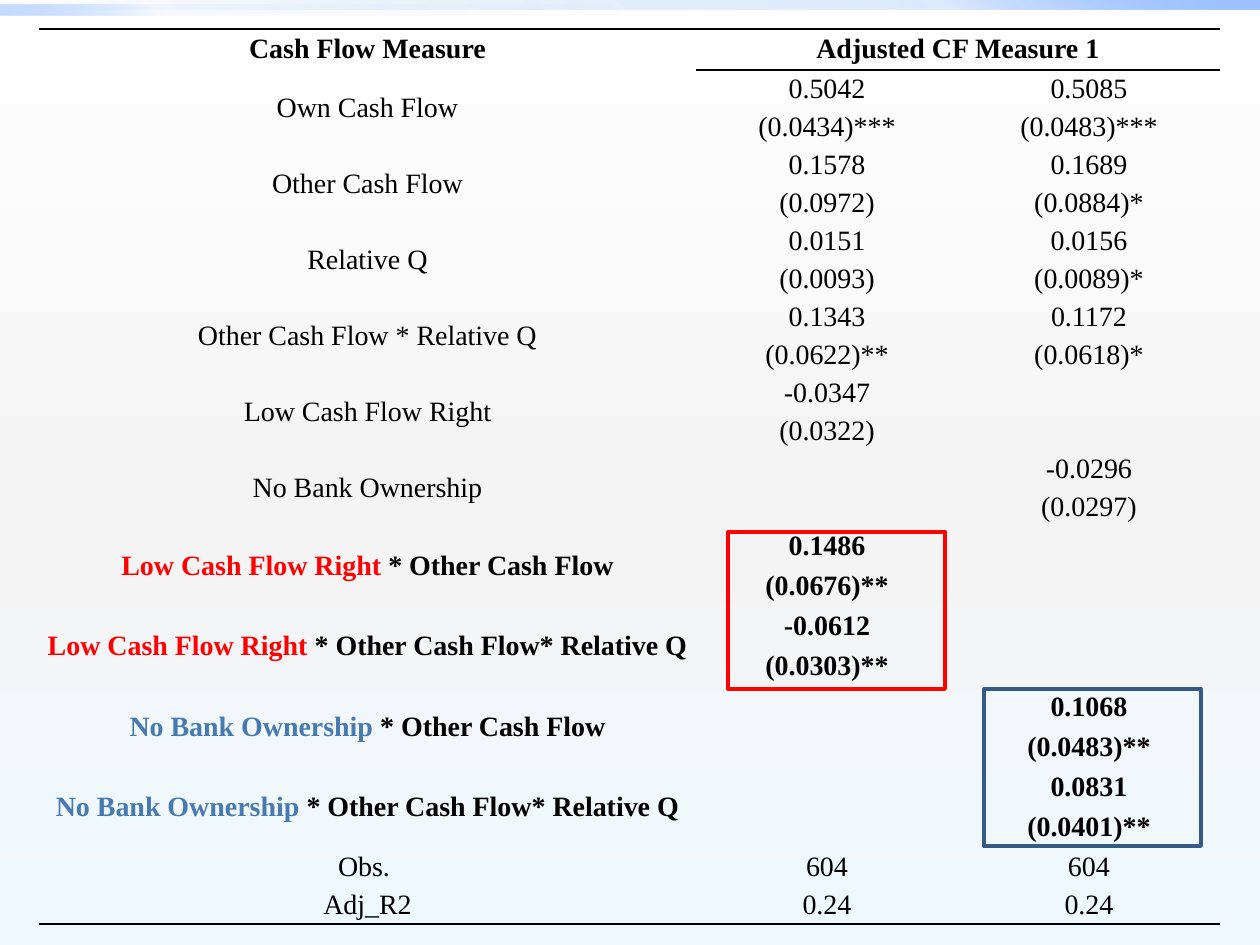
from dataclasses import dataclass

from lxml import etree
from pptx import Presentation
from pptx.dml.color import RGBColor
from pptx.enum.shapes import MSO_SHAPE
from pptx.enum.text import MSO_ANCHOR, PP_ALIGN
from pptx.oxml.ns import qn
from pptx.util import Emu, Pt

RECT = MSO_SHAPE.RECTANGLE
CENTER = PP_ALIGN.CENTER
MIDDLE = MSO_ANCHOR.MIDDLE
PLAIN_TABLE = "{2D5ABB26-0587-4C30-8999-92F81FD0307C}"


@dataclass(frozen=True)
class Theme:
    font: str = "Times New Roman"
    size: int = 16
    ink: str = "000000"
    red: str = "FF0000"
    blue: str = "477AB1"
    navy: str = "355A83"
    rule: float = 1.5
    frame: float = 2.25
    # gradient stops: position %, colour, opacity %
    page: tuple = ((0, "FFFFFF", 100), (55, "F4F4F4", 100), (100, "EEF9FF", 100))
    band: tuple = ((0, "0058B7", 0), (75, "4F95FF", 20), (100, "9EC2FF", 100))
    glow: tuple = ((0, "0058B7", 0), (75, "4F95FF", 5), (100, "9EC2FF", 60))


T = Theme()

# label, highlighted lead, column 1 (value, error), column 2 (value, error)
VARIABLES = [
    ("Own Cash Flow", ("0.5042", "(0.0434)***"), ("0.5085", "(0.0483)***")),
    ("Other Cash Flow", ("0.1578", "(0.0972)"), ("0.1689", "(0.0884)*")),
    ("Relative Q", ("0.0151", "(0.0093)"), ("0.0156", "(0.0089)*")),
    ("Other Cash Flow * Relative Q", ("0.1343", "(0.0622)**"), ("0.1172", "(0.0618)*")),
    ("Low Cash Flow Right", ("-0.0347", "(0.0322)"), ("", "")),
    ("No Bank Ownership", ("", ""), ("-0.0296", "(0.0297)")),
]
LOW, BANK = ("Low Cash Flow Right ", T.red), ("No Bank Ownership ", T.blue)
INTERACTIONS = [
    (LOW, "* Other Cash Flow", ("0.1486", "(0.0676)**"), ("", "")),
    (LOW, "* Other Cash Flow* Relative Q", ("-0.0612", "(0.0303)**"), ("", "")),
    (BANK, "* Other Cash Flow", ("", ""), ("0.1068", "(0.0483)**")),
    (BANK, "* Other Cash Flow* Relative Q", ("", ""), ("0.0831", "(0.0401)**")),
]
SUMMARY = [("Obs. ", "604", "604"), ("Adj_R2", "0.24", "0.24")]

COLS = [657, 262, 262]
ROWS = [41] + [38] * 12 + [40, 40, 40, 41] * 2 + [38] * 2


def px(n):
    return Emu(round(n * 914400 / 126))


def set_gradient(fill, root, stops, angle):
    fill.gradient()
    gs_list = root.find(".//" + qn("a:gsLst"))
    for old in list(gs_list):
        gs_list.remove(old)
    for pos, color, opacity in stops:
        gs = etree.SubElement(gs_list, qn("a:gs"), pos=str(pos * 1000))
        clr = etree.SubElement(gs, qn("a:srgbClr"), val=color)
        if opacity < 100:
            etree.SubElement(clr, qn("a:alpha"), val=str(opacity * 1000))
    gs_list.getparent().find(qn("a:lin")).set("ang", str(angle * 60000))


def add_rect(s, x, y, w, h):
    sp = s.shapes.add_shape(RECT, px(x), px(y), px(w), px(h))
    sp.shadow.inherit = False
    return sp


def add_background(s, w):
    set_gradient(s.background.fill, s._element, T.page, 90)
    # Bands along the top edge
    for y, width, stops, angle in ((0, w, T.band, 315), (5, w // 2, T.glow, 135)):
        sp = add_rect(s, 0, y, width, 10)
        sp.line.fill.background()
        set_gradient(sp.fill, sp._element, stops, angle)


def set_cell(cell, parts=(), bold=False, rules=""):
    """parts: (text, colour) pairs; rules: sides with a line, of T and B."""
    cell.margin_left = cell.margin_right = px(2)
    cell.margin_top = cell.margin_bottom = 0
    cell.vertical_anchor = MIDDLE
    p = cell.text_frame.paragraphs[0]
    p.alignment = CENTER
    for text, color in parts:
        r = p.add_run()
        r.text = text
        r.font.name, r.font.size, r.font.bold = T.font, Pt(T.size), bold
        r.font.color.rgb = RGBColor.from_string(color)
    # Keeps empty cells from stretching their row
    etree.SubElement(p._p, qn("a:endParaRPr"), sz=str(T.size * 100))
    for side in "LRTB":
        ln = etree.SubElement(cell._tc.get_or_add_tcPr(), qn("a:ln" + side),
                              w=str(Pt(T.rule)))
        if side in rules:
            solid = etree.SubElement(ln, qn("a:solidFill"))
            etree.SubElement(solid, qn("a:srgbClr"), val=T.ink)
        else:
            etree.SubElement(ln, qn("a:noFill"))
    cell.fill.background()


def table_rows():
    """Yield each row as (three lists of parts, bold)."""
    def plain(text):
        return [(text, T.ink)] if text else []

    yield [plain("Cash Flow Measure"), plain("Adjusted CF Measure 1"), []], True
    groups = [(plain(label), a, b, False) for label, a, b in VARIABLES]
    groups += [([lead] + plain(rest), a, b, True) for lead, rest, a, b in INTERACTIONS]
    for label, first, second, bold in groups:
        for i in range(2):
            yield [[] if i else label, plain(first[i]), plain(second[i])], bold
    for row in SUMMARY:
        yield [plain(text) for text in row], False


def add_results_table(s, x, y):
    frame = s.shapes.add_table(len(ROWS), len(COLS), px(x), px(y),
                               px(sum(COLS)), px(sum(ROWS)))
    table = frame.table
    table.first_row = table.horz_banding = False
    table._tbl.tblPr.find(qn("a:tableStyleId")).text = PLAIN_TABLE
    for column, w in zip(table.columns, COLS):
        column.width = px(w)
    for row, h in zip(table.rows, ROWS):
        row.height = px(h)

    last = len(ROWS) - 1
    for r, (cells, bold) in enumerate(table_rows()):
        for c, parts in enumerate(cells):
            top = "T" if r == 0 or (r == 1 and c) else ""
            bottom = "B" if r == last or (r == 0 and c) else ""
            set_cell(table.cell(r, c), parts, bold, top + bottom)

    # The heading spans both models, each label spans value and error
    table.cell(0, 1).merge(table.cell(0, 2))
    for r in range(1, last - 1, 2):
        table.cell(r, 0).merge(table.cell(r + 1, 0))


def add_highlight(s, x, y, w, h, color):
    sp = add_rect(s, x, y, w, h)
    sp.fill.background()
    sp.line.color.rgb = RGBColor.from_string(color)
    sp.line.width = Pt(T.frame)


def main():
    prs = Presentation()
    prs.slide_width, prs.slide_height = px(1260), px(945)
    s = prs.slides.add_slide(prs.slide_layouts[6])
    add_background(s, 1260)
    add_results_table(s, 39, 29)
    # Frames around the significant interaction terms
    add_highlight(s, 728, 532, 217, 157, T.red)
    add_highlight(s, 984, 689, 217, 157, T.navy)
    prs.save("out.pptx")


if __name__ == "__main__":
    main()
